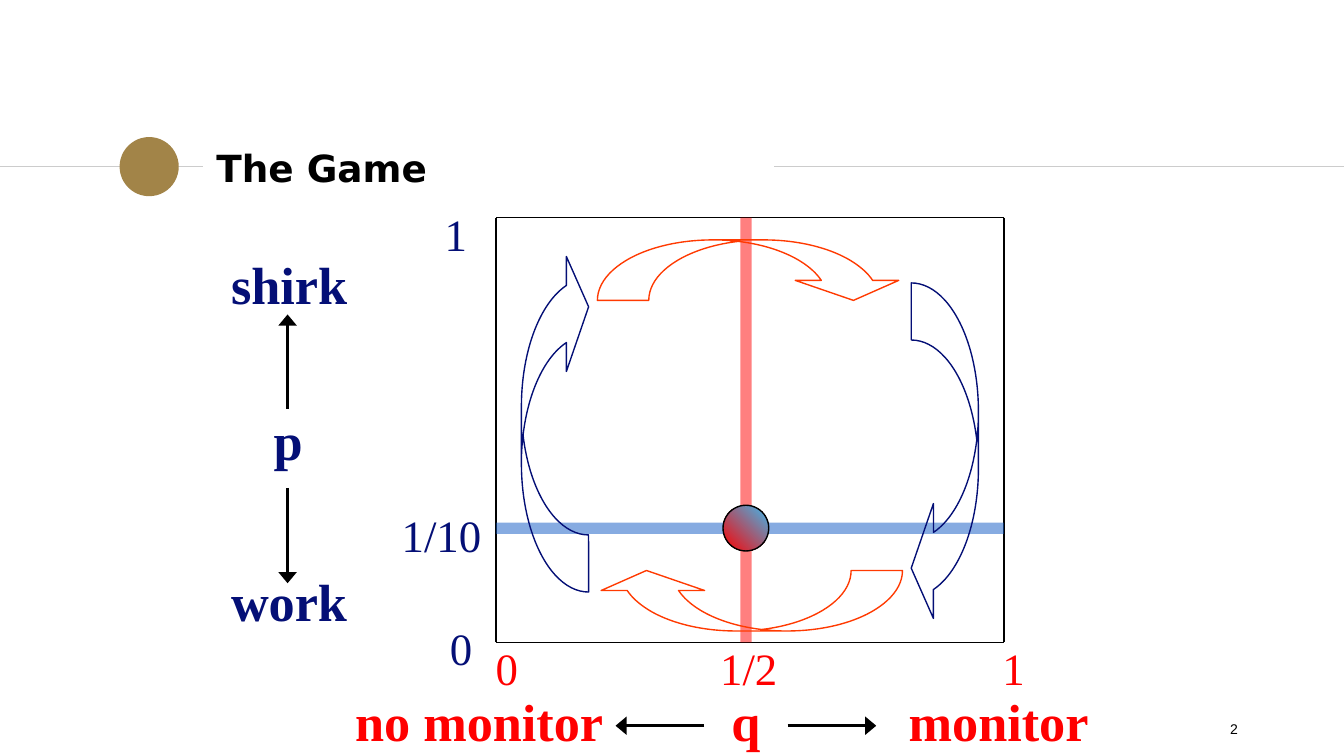
from lxml import etree
from pptx import Presentation
from pptx.dml.color import RGBColor
from pptx.enum.shapes import MSO_CONNECTOR, MSO_SHAPE
from pptx.enum.text import MSO_ANCHOR, MSO_AUTO_SIZE, PP_ALIGN
from pptx.oxml.ns import qn
from pptx.util import Inches, Pt

STRAIGHT = MSO_CONNECTOR.STRAIGHT
OVAL, CURVED_ARROW = MSO_SHAPE.OVAL, MSO_SHAPE.CURVED_DOWN_ARROW
LEFT, CENTER, RIGHT = PP_ALIGN.LEFT, PP_ALIGN.CENTER, PP_ALIGN.RIGHT
MIDDLE = MSO_ANCHOR.MIDDLE
GROW = MSO_AUTO_SIZE.SHAPE_TO_FIT_TEXT

BLACK = RGBColor(0x00, 0x00, 0x00)
GREY = RGBColor(0xCC, 0xCC, 0xCC)
GOLD = RGBColor(0xA2, 0x84, 0x48)
RED = RGBColor(0xFF, 0x00, 0x00)
NAVY = RGBColor(0x04, 0x0F, 0x76)
BLUE = RGBColor(0x0E, 0x58, 0xC4)
SKY = RGBColor(0x3E, 0xBB, 0xF0)
ORANGE = RGBColor(0xFF, 0x3A, 0x01)


def add_line(s, start, end, color, width=0.75, arrow=False, alpha=None):
    """Draw a straight line, optionally with an arrowhead or transparency."""
    c = s.shapes.add_connector(STRAIGHT, *map(Inches, (*start, *end)))
    c.line.color.rgb = color
    c.line.width = Pt(width)
    ln = c.line._get_or_add_ln()
    if alpha:
        etree.SubElement(ln.find(".//" + qn("a:srgbClr")), qn("a:alpha"), val=str(alpha * 1000))
    if arrow:
        etree.SubElement(ln, qn("a:tailEnd"), type="triangle", w="lg", len="med")
    etree.SubElement(c._element.spPr, qn("a:effectLst"))


def add_text(s, box, text, size, color, align=LEFT, bold=False, font="Times New Roman"):
    """Place a one-line label in a text box and return its frame."""
    tf = s.shapes.add_textbox(*map(Inches, box)).text_frame
    tf.word_wrap = True
    p = tf.paragraphs[0]
    p.text, p.alignment = text, align
    p.font.name, p.font.size, p.font.bold = font, Pt(size), bold
    p.font.color.rgb = color
    return tf


def add_label(s, *args):
    """Place a growing label with half a line of space before it."""
    tf = add_text(s, *args)
    tf.auto_size = GROW
    pPr = tf.paragraphs[0]._p.get_or_add_pPr()
    before = etree.Element(qn("a:spcBef"))
    etree.SubElement(before, qn("a:spcPct"), val="50000")
    pPr.insert(0, before)


def add_shape(s, kind, box):
    """Add a preset shape without a shadow."""
    sp = s.shapes.add_shape(kind, *map(Inches, box))
    sp.shadow.inherit = False
    return sp


def add_header(s, x, y, w, h):
    """Place the title between two rules, with a gold dot on the left."""
    mid = y + h / 2
    title_x, title_w, dot = x + 1.51, 4.24, 0.44
    add_line(s, (x, mid), (title_x, mid), GREY)
    add_line(s, (title_x + title_w + 0.01, mid), (x + w, mid), GREY)
    sp = add_shape(s, OVAL, (x + 0.89, mid - dot / 2, dot, dot))
    sp.fill.solid()
    sp.fill.fore_color.rgb = GOLD
    sp.line.fill.background()

    title = s.shapes.title
    box = (title_x, y + 0.01, title_w, h)
    title.left, title.top, title.width, title.height = map(Inches, box)
    tf = title.text_frame
    tf.margin_left = tf.margin_right = tf.margin_top = tf.margin_bottom = Inches(0.1)
    tf.vertical_anchor = MIDDLE
    p = tf.paragraphs[0]
    p.text, p.alignment = "The Game", LEFT
    p.font.name, p.font.size, p.font.bold = "DejaVu Sans", Pt(20), True
    p.font.color.rgb = BLACK


def add_page_number(s, box):
    """Place the page number low in its box."""
    tf = add_text(s, box, "2", 7.5, BLACK, RIGHT, False, "Arial")
    tf.vertical_anchor = MIDDLE
    tf.margin_top = Inches(0.18)


def add_p_axis(s, x, y):
    """Stack the worker's choices with arrows leading away from p."""
    for text, dx, dy, w in (("p", 0.68, 1.16, 0.44), ("shirk", 0.16, 0, 1.29),
                            ("work", 0, 2.36, 1.45)):
        add_label(s, (x + dx, y + dy, w, 0.57), text, 28, NAVY, RIGHT, True)
    for start, end in ((1.21, 0.51), (1.8, 2.51)):
        add_line(s, (x + 0.91, y + start), (x + 0.91, y + end), BLACK, 1.5, arrow=True)


def add_q_axis(s, x, y):
    """Line up the employer's choices with arrows leading away from q."""
    for text, dx, w in (("q", 2.89, 0.6), ("monitor", 4.21, 1.72), ("no monitor", 0, 2.41)):
        add_label(s, (x + dx, y, w, 0.57), text, 28, RED, CENTER, True)
    for start, end in ((3.5, 4.16), (2.88, 2.22)):
        add_line(s, (x + start, y + 0.32), (x + end, y + 0.32), BLACK, 1.5, arrow=True)


def add_plane(s, x, y, w, h):
    """Draw the strategy square, its best-response bars and its scales."""
    corners = [(x, y), (x + w, y), (x + w, y + h), (x, y + h)]
    for start, end in zip(corners, corners[1:] + corners[:1]):
        add_line(s, start, end, BLACK)
    q_x, p_y, dot = x + 1.86, y + 2.31, 0.34
    add_line(s, (q_x, y), (q_x, y + h), RED, 6, alpha=50)
    add_line(s, (x, p_y), (x + w, p_y), BLUE, 6, alpha=50)

    for text, dx, width in (("0", -0.1, 0.27), ("1", 3.67, 0.27), ("1/2", 1.57, 0.74)):
        add_label(s, (x + dx, y + h - 0.06, width, 0.5), text, 24, RED)
    for text, dx, dy, width in (("0", -0.44, 2.95, 0.27), ("1/10", -0.82, 2.11, 0.83),
                                ("1", -0.48, -0.13, 0.34)):
        add_label(s, (x + dx, y + dy, width, 0.41), text, 24, NAVY, CENTER)

    sp = add_shape(s, OVAL, (q_x - dot / 2, p_y - dot / 2, dot, dot))
    sp.fill.gradient()
    sp.fill.gradient_angle = 45
    for stop, color in zip(sp.fill.gradient_stops, (RED, SKY)):
        stop.color.rgb = color
    sp.line.color.rgb = BLACK
    sp.line.width = Pt(0.75)


def add_cycle(s, x, y):
    """Circle the square clockwise with four curved arrows, given by their centres."""
    horizontal, vertical = (2.29, 0.45, ORANGE), (2.55, 0.5, NAVY)
    for dx, dy, angle, (w, h, color) in ((1.88, 2.85, 180, horizontal),
                                         (3.34, 1.76, 90, vertical),
                                         (1.9, 0.39, 0, horizontal),
                                         (0.44, 1.51, 270, vertical)):
        sp = add_shape(s, CURVED_ARROW, (x + dx - w / 2, y + dy - h / 2, w, h))
        sp.rotation = angle
        for i, value in enumerate((0.85, 1.71, 0.33)):
            sp.adjustments[i] = value
        sp.fill.background()
        sp.line.color.rgb = color
        sp.line.width = Pt(0.75)


def main():
    """Build the slide and save it."""
    prs = Presentation()
    prs.slide_width = Inches(10)
    prs.slide_height = prs.slide_width * 9 // 16
    s = prs.slides.add_slide(prs.slide_layouts[5])
    plane_x, plane_y = 3.69, 1.62
    add_header(s, 0, 1, 10, 0.48)
    add_page_number(s, (7.06, 5.21, 2.25, 0.3))
    add_q_axis(s, 2.36, 5.08)
    add_p_axis(s, 1.23, 1.83)
    add_plane(s, plane_x, plane_y, 3.78, 3.16)
    add_cycle(s, plane_x, plane_y)
    prs.save("out.pptx")


if __name__ == "__main__":
    main()
